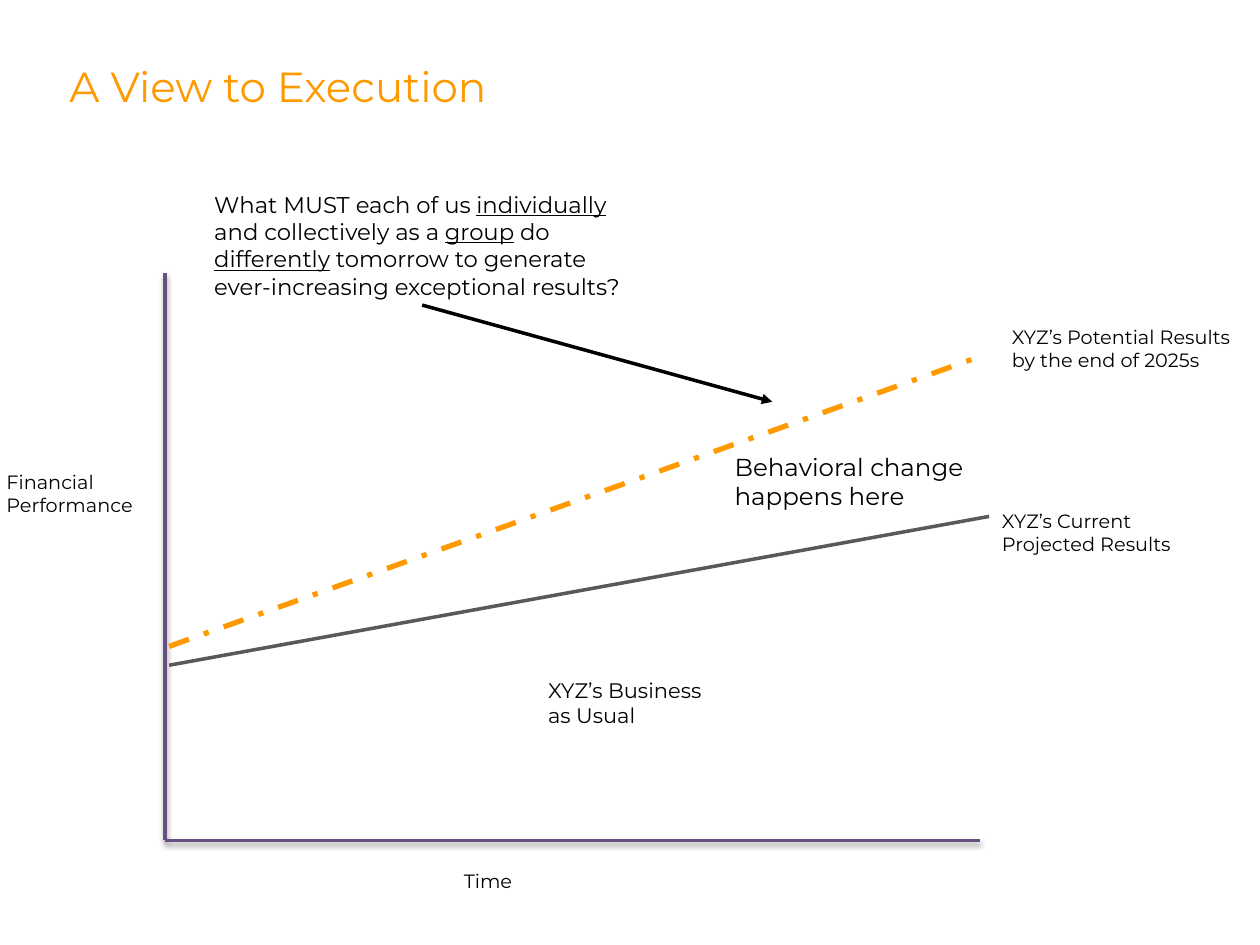
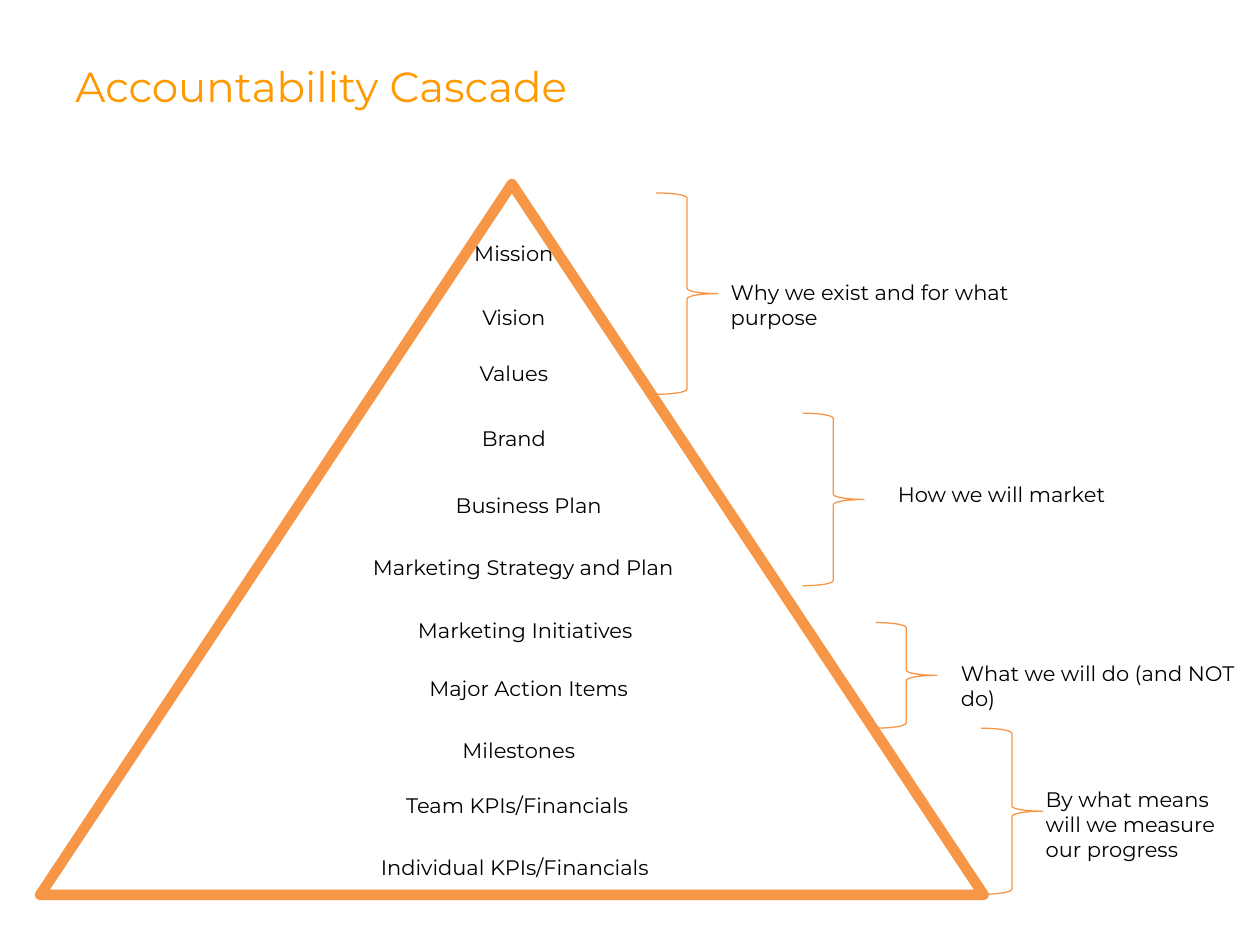
from collections import namedtuple
from dataclasses import dataclass

from lxml import etree
from pptx import Presentation
from pptx.dml.color import RGBColor
from pptx.enum import dml, shapes, text
from pptx.oxml import ns
from pptx.util import Cm, Pt

Box = namedtuple("Box", "x y w h")


@dataclass(frozen=True)
class Theme:
    font: str = "Montserrat"
    ink: str = "000000"
    paper: str = "FFFFFF"
    title: str = "FF9900"
    axis: str = "664F81"
    trend: str = "595959"
    frame: str = "F79646"
    head: int = 24
    big: int = 14
    ask: int = 13
    body: int = 12
    small: int = 11
    tight: float = 0.13
    loose: float = 0.25


T = Theme()
HEAD = Box(1.27, 0.13, 22.86, 3.18)
GRAPH = Box(3.33, 5.51, 16.43, 11.43)
CONE = Box(0.81, 3.71, 19.02, 14.33)


def rgb(code):
    return RGBColor.from_string(code)


def sub(node, tag, **attrs):
    return etree.SubElement(node, ns.qn(tag), attrs)


def write(frame, paras, size, pad, color=T.ink, align=text.PP_ALIGN.LEFT):
    """Fill a frame; each paragraph is a list of runs, and a run from "_" on is underlined."""
    frame.word_wrap = True
    frame.auto_size = text.MSO_AUTO_SIZE.NONE
    frame.margin_left = frame.margin_right = Cm(pad)
    frame.margin_top = frame.margin_bottom = Cm(pad)
    for i, runs in enumerate(paras):
        para = frame.add_paragraph() if i else frame.paragraphs[0]
        para.alignment = align
        for words in runs:
            run = para.add_run()
            run.text = words.lstrip("_")
            font = run.font
            font.name, font.size = T.font, Pt(size)
            font.color.rgb = rgb(color)
            if words.startswith("_"):
                font.underline = True


def label(slide, box, spot, paras, size=T.body, pad=T.loose, **style):
    """Add text at a spot measured from the corner of the box."""
    x, y, w, h = spot
    item = slide.shapes.add_textbox(Cm(box.x + x), Cm(box.y + y), Cm(w), Cm(h))
    write(item.text_frame, paras, size, pad, **style)


def stroke(slide, box, start, end, color, width, dash=None, arrow=False, shade=False):
    """Draw a line between two points measured from the corner of the box."""
    ends = [Cm(base + d) for point in (start, end)
            for base, d in zip((box.x, box.y), point)]
    line = slide.shapes.add_connector(shapes.MSO_CONNECTOR.STRAIGHT, *ends)
    line.line.color.rgb = rgb(color)
    line.line.width = Pt(width)
    if dash:
        line.line.dash_style = dash
    props = line._element.spPr
    if arrow:
        sub(props.find(ns.qn("a:ln")), "a:tailEnd", type="triangle")
    effects = sub(props, "a:effectLst")
    if shade:
        cast = sub(effects, "a:outerShdw", blurRad="38100", dist="20000",
                   dir="5400000", rotWithShape="0")
        sub(sub(cast, "a:srgbClr", val=T.ink), "a:alpha", val="37000")


def outline(slide, box, kind, spot, width, fill=None):
    x, y, w, h = spot
    item = slide.shapes.add_shape(kind, Cm(box.x + x), Cm(box.y + y), Cm(w), Cm(h))
    item.shadow.inherit = False
    item.line.color.rgb = rgb(T.frame)
    item.line.width = Pt(width)
    if fill:
        item.fill.solid()
        item.fill.fore_color.rgb = rgb(fill)
    else:
        item.fill.background()


def start(deck, words, pad):
    """Add a slide with its title in place."""
    slide = deck.slides.add_slide(deck.slide_layouts[5])
    title = slide.shapes.title
    title.left, title.top, title.width, title.height = map(Cm, HEAD)
    title.text_frame.vertical_anchor = text.MSO_ANCHOR.MIDDLE
    write(title.text_frame, [[words]], T.head, pad, T.title)
    return slide


def graph(slide, box):
    base = (0, box.h)
    for end in ((0, 0), (box.w, box.h)):
        stroke(slide, box, base, end, T.axis, 2, shade=True)
    stroke(slide, box, (0.08, 7.9), (16.61, 4.9), T.trend, 2)
    stroke(slide, box, (0.08, 7.52), (16.36, 1.7), T.title, 3,
           dash=dml.MSO_LINE.DASH_DOT)
    stroke(slide, box, (5.18, 0.64), (12.24, 2.59), T.ink, 2, arrow=True)

    for spot, words in (
        ((5.89, 11.89, 1.88, 0.69), "Time"),
        ((-box.x, 3.84, 3.02, 1.09), "Financial Performance"),
        ((16.74, 4.62, 4.75, 0.69), "XYZ’s Current Projected Results"),
        ((16.94, 0.91, 5, 0.69), "XYZ’s Potential Results by the end of 2025s"),
    ):
        label(slide, box, spot, [[words]], T.small, T.tight)

    ask = ["What MUST each of us ", "_individually", " and collectively as a ",
           "_group", " do ", "_differently",
           " tomorrow to generate ever-increasing exceptional results?"]
    label(slide, box, (0.86, -1.8, 8.66, 3.12), [ask], T.ask, T.tight)
    label(slide, box, (7.47, 7.9, 5.13, 2.13), [["XYZ’s Business"], ["as Usual"]])
    label(slide, box, (11.23, 3.35, 5.56, 2.82),
          [["Behavioral change happens here"]], T.big)


def cone(slide, box):
    """Draw the triangle and its tiers, each set off a little from the middle."""
    outline(slide, box, shapes.MSO_SHAPE.ISOSCELES_TRIANGLE,
            (0, 0, box.w, box.h), 6, T.paper)
    for words, shift, y, w in (
        ("Mission", 0.04, 0.89, 3.45),
        ("Vision", 0.04, 2.18, 3.45),
        ("Values", 0.04, 3.3, 3.45),
        ("Brand", 0.04, 4.62, 3.45),
        ("Business Plan", 0.34, 5.97, 5.74),
        ("Marketing Strategy and Plan", 0.23, 7.21, 8.51),
        ("Marketing Initiatives", 0.27, 8.48, 5.74),
        ("Major Action Items", 0.34, 9.65, 5.74),
        ("Milestones", 0.14, 10.9, 5.74),
        ("Team KPIs/Financials", 0.11, 12.01, 5.74),
        ("Individual KPIs/Financials", 0.06, 13.26, 8.18),
    ):
        label(slide, box, ((box.w - w) / 2 + shift, y, w, 2.13), [[words]],
              align=text.PP_ALIGN.CENTER)


def notes(slide, box):
    """Set a brace and its remark beside each group of tiers."""
    for x, y, h, left, top, w, words in (
        (12.42, 0.18, 4.06, 13.67, 1.68, 6.65, "Why we exist and for what purpose"),
        (15.37, 4.62, 3.48, 17.04, 5.74, 6.65, "How we will market"),
        (16.84, 8.84, 2.13, 18.31, 9.35, 6.65, "What we will do (and NOT do)"),
        (18.97, 10.97, 3.35, 20.02, 11.89, 4.57,
         "By what means will we measure our progress"),
    ):
        outline(slide, box, shapes.MSO_SHAPE.RIGHT_BRACE, (x, y, 1.24, h), 0.75)
        label(slide, box, (left, top, w, 2.13), [[words]])


def main():
    deck = Presentation()
    deck.slide_width, deck.slide_height = Cm(25.4), Cm(19.05)
    graph(start(deck, "A View to Execution", T.tight), GRAPH)
    slide = start(deck, "Accountability Cascade", T.loose)
    cone(slide, CONE)
    notes(slide, CONE)
    deck.save("out.pptx")


if __name__ == "__main__":
    main()
